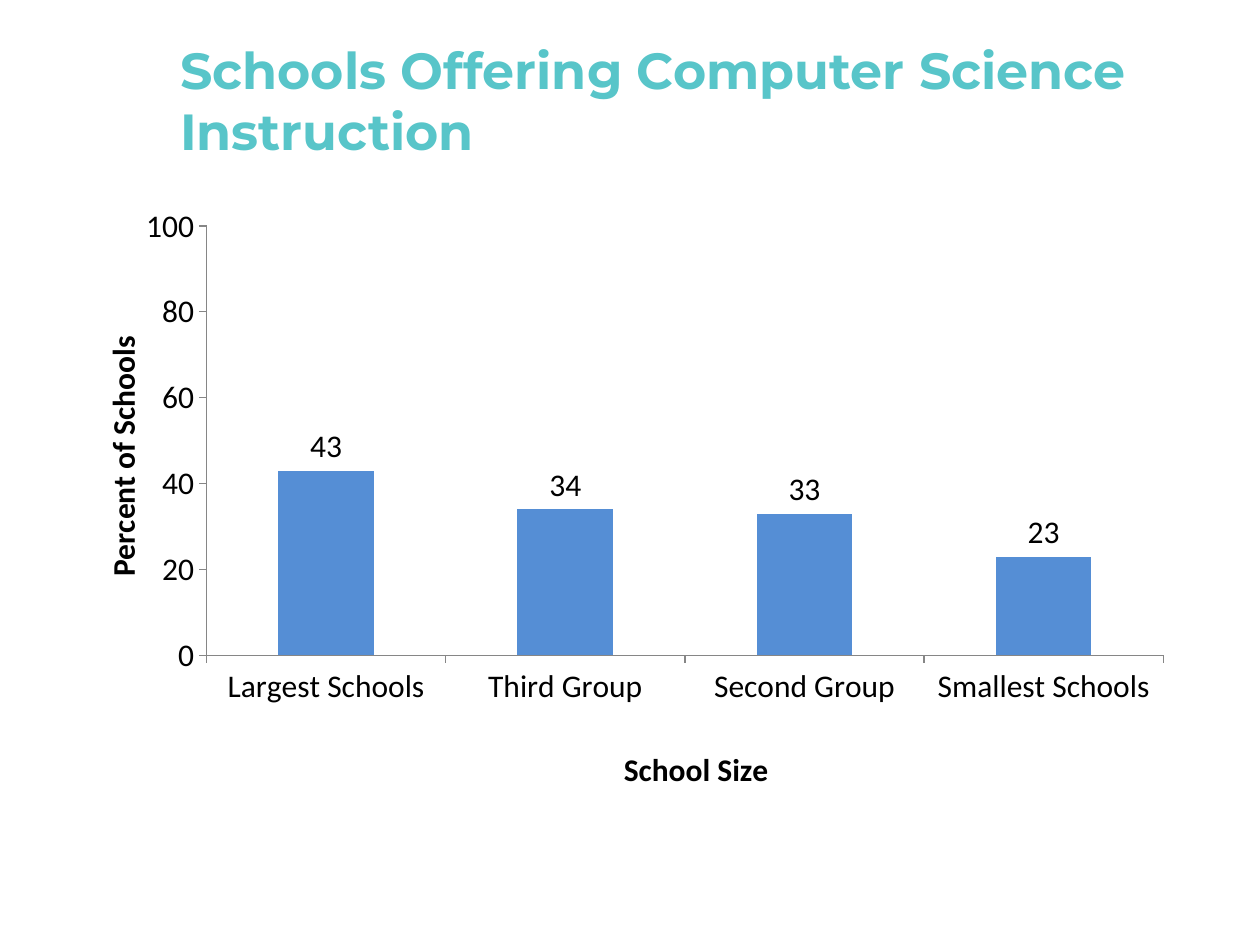
from lxml import etree
from pptx import Presentation
from pptx import util as u
from pptx.chart.data import CategoryChartData
from pptx.dml.color import RGBColor
from pptx.enum import chart as ch, text
from pptx.oxml.ns import qn

TITLE = "Schools Offering Computer Science Instruction"
SCHOOLS = {"Largest Schools": 43, "Third Group": 34, "Second Group": 33, "Smallest Schools": 23}
PLOT_AREA = {"x": 0.12, "y": 0.05, "w": 0.86, "h": 0.7}
SIZE_TITLE = {"x": 0.49, "y": 0.89}
PERCENT_TITLE = {"x": 0.02, "y": 0.22}


def color(hex_value):
    return RGBColor.from_string(hex_value)


def write(frame, words, font="Calibri", size=18, bold=True, fill="000000"):
    para = frame.paragraphs[0]
    span = para.add_run()
    span.text = words
    span.font.name = font
    span.font.size = u.Pt(size)
    span.font.bold = bold
    span.font.color.rgb = color(fill)
    return para


def set_layout(parent, position, index=0):
    for old in parent.findall(qn("c:layout")):
        parent.remove(old)
    layout = etree.Element(qn("c:layout"))
    manual = etree.SubElement(layout, qn("c:manualLayout"))
    if "w" in position:
        etree.SubElement(manual, qn("c:layoutTarget"), val="inner")
    for side in "xy":
        etree.SubElement(manual, qn(f"c:{side}Mode"), val="edge")
    for key, value in position.items():
        etree.SubElement(manual, qn(f"c:{key}"), val=str(value))
    parent.insert(index, layout)


def style_axis(axis, name, position):
    axis.has_major_gridlines = False
    axis.major_tick_mark = ch.XL_TICK_MARK.OUTSIDE
    axis.minor_tick_mark = ch.XL_TICK_MARK.NONE
    axis.format.line.color.rgb = color("868686")
    axis.format.line.width = u.Pt(0.75)
    write(axis.axis_title.text_frame, name)
    set_layout(axis.axis_title._element, position, 1)


def add_school_chart(page):
    data = CategoryChartData()
    data.categories = list(SCHOOLS)
    data.add_series("Series 1", list(SCHOOLS.values()))
    chart = page.shapes.add_chart(
        ch.XL_CHART_TYPE.COLUMN_CLUSTERED,
        u.Inches(0.58), u.Inches(1.55), u.Inches(8.83), u.Inches(4.87), data,
    ).chart
    chart.has_legend = False
    chart.has_title = False
    chart.font.name = "Calibri"
    chart.font.size = u.Pt(18)
    chart.font.color.rgb = color("000000")

    style_axis(chart.category_axis, "School Size", SIZE_TITLE)
    style_axis(chart.value_axis, "Percent of Schools", PERCENT_TITLE)
    chart.value_axis.minimum_scale = 0
    chart.value_axis.maximum_scale = 100
    chart.value_axis.major_unit = 20

    plot = chart.plots[0]
    plot.gap_width = 150
    plot.vary_by_categories = False
    bars = plot.series[0]
    bars.format.fill.solid()
    bars.format.fill.fore_color.rgb = color("558ED5")
    bars.data_labels.show_value = True
    bars.data_labels.position = ch.XL_LABEL_POSITION.OUTSIDE_END
    set_layout(chart._chartSpace.chart.plotArea, PLOT_AREA)


def main():
    deck = Presentation()
    deck.slide_width, deck.slide_height = u.Inches(10), u.Inches(7.5)
    page = deck.slides.add_slide(deck.slide_layouts[5])
    add_school_chart(page)
    title = page.shapes.title
    title.left, title.top = u.Inches(1.33), u.Inches(0.17)
    title.width, title.height = u.Inches(8.33), u.Inches(1.25)
    title.text_frame.word_wrap = True
    title.text_frame.auto_size = text.MSO_AUTO_SIZE.NONE
    title.text_frame.vertical_anchor = text.MSO_ANCHOR.MIDDLE
    para = write(title.text_frame, TITLE, font="Montserrat", size=29, fill="58C5C9")
    para.alignment = text.PP_ALIGN.LEFT
    deck.save("out.pptx")


if __name__ == "__main__":
    main()
